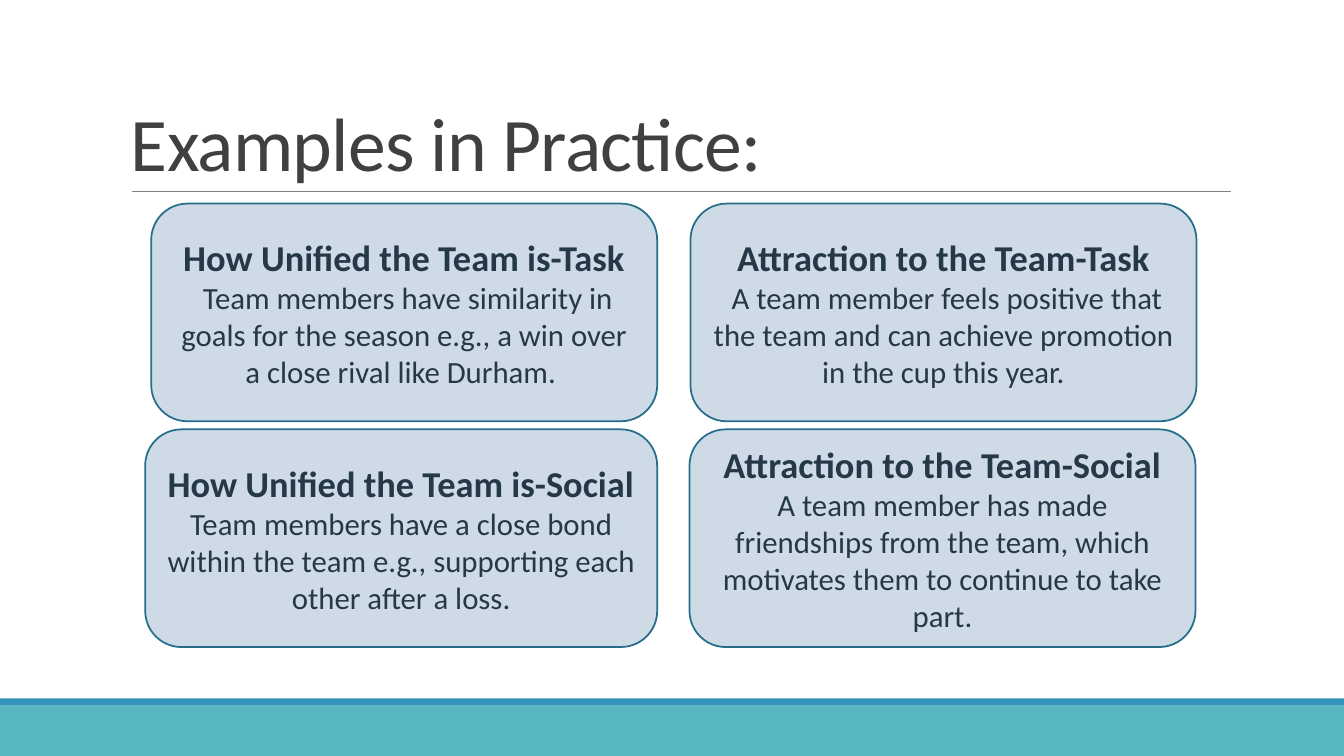
"""Build a slide with four team cohesion examples on rounded cards."""
from pptx import Presentation
from pptx.dml.color import RGBColor as Rgb
from pptx.enum.shapes import MSO_CONNECTOR as Conn, MSO_SHAPE as Form
from pptx.enum.text import MSO_ANCHOR as Anchor, PP_ALIGN as Align
from pptx.oxml.ns import qn
from pptx.util import Pt
from lxml.etree import SubElement

INK = {
    "band": "58B6C0", "strip": "3494BA", "rule": "808080", "title": "404040",
    "card": "CEDBE6", "edge": "266D8A", "text": "253848",
}
FONT = "Calibri"
WIDE, HIGH = 960, 540
TOP, STEP, TALL = 145.44, 161.28, 155.52

CARDS = [
    (0, 108, 361.44, "How Unified the Team is-Task",
     " Team members have similarity in goals for the season e.g., "
     "a win over a close rival like Durham. "),
    (1, 103.68, 365.76, "How Unified the Team is-Social",
     "Team members have a close bond within the team e.g., "
     "supporting each other after a loss."),
    (0, 493.2, 361.44, "Attraction to the Team-Task",
     " A team member feels positive that the team and can achieve "
     "promotion in the cup this year."),
    (1, 492.48, 361.44, "Attraction to the Team-Social",
     "A team member has made friendships from the team, which "
     "motivates them to continue to take part."),
]


def tint(name):
    return Rgb.from_string(INK[name])


def write(para, text, size, ink, bold=False, align=Align.LEFT, lead=None, gap=None):
    para.alignment = align
    if lead:
        para.line_spacing = lead
    run = para.add_run()
    run.text = text
    font = run.font
    font.name, font.size, font.bold = FONT, Pt(size), bold
    font.color.rgb = tint(ink)
    if gap:
        run._r.get_or_add_rPr().set("spc", str(round(gap * 100)))


def block(slide, form, box, fill, edge=None):
    shape = slide.shapes.add_shape(form, *map(Pt, box))
    shape.shadow.inherit = False
    shape.fill.solid()
    shape.fill.fore_color.rgb = tint(fill)
    if edge:
        shape.line.color.rgb = tint(edge)
        shape.line.width = Pt(1.25)
    else:
        shape.line.fill.background()
    return shape


def rule(slide, left, right, top):
    line = slide.shapes.add_connector(Conn.STRAIGHT, Pt(left), Pt(top), Pt(right), Pt(top))
    line.line.color.rgb = tint("rule")
    line.line.width = Pt(0.5)
    SubElement(line._element.spPr, qn("a:effectLst"))


def title(slide, text):
    box = slide.shapes.add_textbox(Pt(86.4), Pt(22.32), Pt(792), Pt(114.48))
    frame = box.text_frame
    frame.word_wrap = True
    frame.vertical_anchor = Anchor.BOTTOM
    write(frame.paragraphs[0], text, size=54, ink="title", lead=0.85, gap=-0.5)


def card(slide, row, left, width, head, body):
    box = left, TOP + row * STEP, width, TALL
    frame = block(slide, Form.ROUNDED_RECTANGLE, box, "card", "edge").text_frame
    frame.word_wrap = True
    frame.vertical_anchor = Anchor.MIDDLE
    write(frame.paragraphs[0], head, size=26, ink="text", bold=True, align=Align.CENTER)
    write(frame.add_paragraph(), body, size=22, ink="text", align=Align.CENTER)


def main():
    deck = Presentation()
    deck.slide_width, deck.slide_height = Pt(WIDE), Pt(HIGH)
    slide = deck.slides.add_slide(deck.slide_layouts[6])
    block(slide, Form.RECTANGLE, (0, 504, WIDE, 36), "band")
    block(slide, Form.RECTANGLE, (0, 498.8, WIDE, 5.2), "strip")
    rule(slide, 94.3, 879.1, 136.8)
    title(slide, "Examples in Practice:")
    for item in CARDS:
        card(slide, *item)
    deck.save("out.pptx")


if __name__ == "__main__":
    main()
